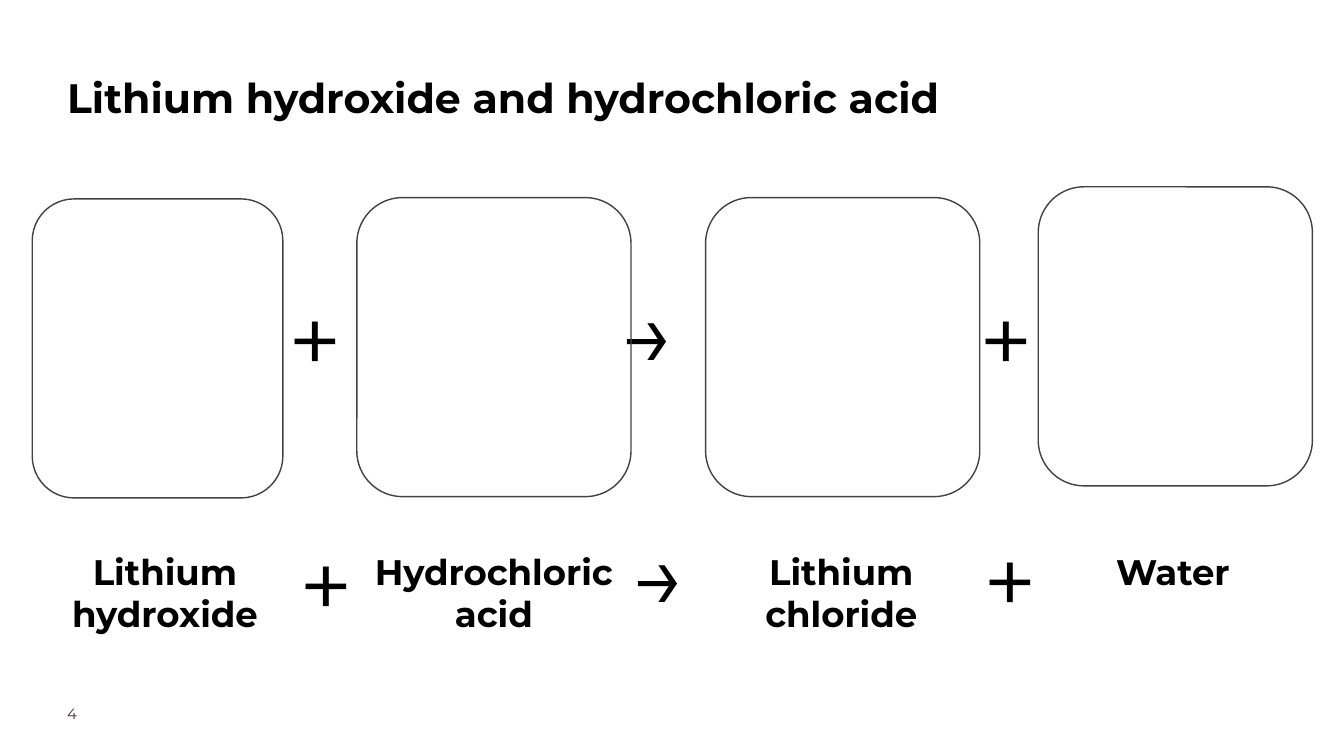
from pptx import Presentation
from pptx.dml.color import RGBColor
from pptx.enum.shapes import MSO_SHAPE
from pptx.enum.text import MSO_ANCHOR, PP_ALIGN
from pptx.util import Inches, Pt

ROUNDED = MSO_SHAPE.ROUNDED_RECTANGLE
TOP, MIDDLE = MSO_ANCHOR.TOP, MSO_ANCHOR.MIDDLE
LEFT, CENTER = PP_ALIGN.LEFT, PP_ALIGN.CENTER

FONT = "Montserrat"
BLACK, GREY, PLUM = "000000", "434343", "4B3241"

TITLE = {"size": Pt(44), "bold": True}
LABEL = {"size": Pt(38), "bold": True}
SYMBOL = {"size": Pt(100), "bold": False}
NUMBER = {"size": Pt(16), "bold": False}

# left, top, width of each drawing frame
FRAMES = [(0.48, 2.96, 3.73), (5.31, 2.94, 4.08), (10.5, 2.94, 4.08), (15.45, 2.78, 4.08)]
FRAME_HEIGHT = 4.45

# name, left, width, height
SUBSTANCES = [
    ("Lithium hydroxide", 0.59, 3.73, 1.6),
    ("Hydrochloric acid", 5.31, 4.08, 1.6),
    ("Lithium chloride", 10.48, 4.08, 1.6),
    ("Water", 15.59, 3.73, 1.02),
]
LABEL_TOP = 8.08

# symbol, left, top: between the frames, then between the names
SYMBOLS = [
    ("+", 3.83, 4.4), ("→ ", 8.97, 4.31), ("+", 14.11, 4.4),
    ("+", 4, 8.05), ("→ ", 9.13, 7.91), ("+", 14.17, 8),
]
SYMBOL_SIZE = (1.72, 1.22)


def rgb(value):
    return RGBColor.from_string(value)


def add_text(s, text, box, font, color=BLACK, align=LEFT, anchor=TOP, inset=0.0, spacing=None):
    tf = s.shapes.add_textbox(*map(Inches, box)).text_frame
    tf.word_wrap = True
    tf.vertical_anchor = anchor
    for side in ("left", "top", "right", "bottom"):
        setattr(tf, f"margin_{side}", Inches(inset))
    p = tf.paragraphs[0]
    p.alignment = align
    p.line_spacing = spacing
    r = p.add_run()
    r.text = text
    r.font.name = FONT
    r.font.color.rgb = rgb(color)
    for name, value in font.items():
        setattr(r.font, name, value)


def add_frame(s, left, top, width):
    """Add an empty rounded box to draw a substance in."""
    sp = s.shapes.add_shape(ROUNDED, *map(Inches, (left, top, width, FRAME_HEIGHT)))
    sp.adjustments[0] = 0.167
    sp.shadow.inherit = False
    sp.fill.background()
    sp.line.color.rgb = rgb(GREY)
    sp.line.width = Pt(1.5)


def main():
    prs = Presentation()
    prs.slide_width, prs.slide_height = Inches(20), Inches(11.25)
    s = prs.slides.add_slide(prs.slide_layouts[6])

    add_text(s, "Lithium hydroxide and hydrochloric acid", (1, 0.97, 14.44, 1.78),
             TITLE, spacing=1.15)
    add_text(s, "4", (1, 10.48, 1.57, 0.39), NUMBER, PLUM)
    for name, left, width, height in SUBSTANCES:
        add_text(s, name, (left, LABEL_TOP, width, height), LABEL, align=CENTER, inset=0.1)
    for symbol, left, top in SYMBOLS:
        add_text(s, symbol, (left, top, *SYMBOL_SIZE), SYMBOL,
                 align=CENTER, anchor=MIDDLE, inset=0.1)
    for frame in FRAMES:
        add_frame(s, *frame)

    prs.save("out.pptx")


if __name__ == "__main__":
    main()
